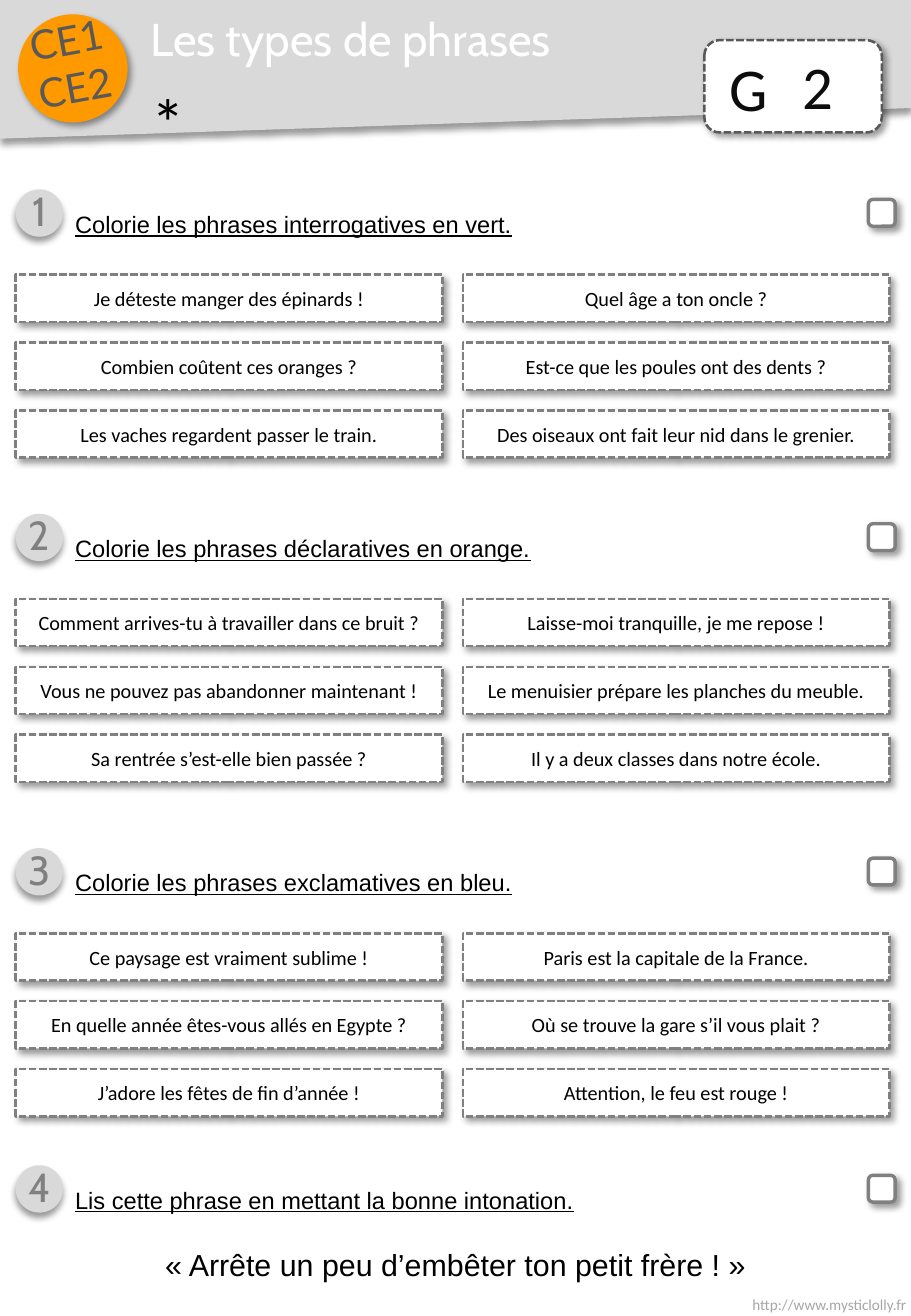
from lxml import etree
from pptx import Presentation
from pptx import util as u
from pptx.dml.color import RGBColor
from pptx.enum import dml, shapes, text
from pptx.oxml.ns import qn

Kind = shapes.MSO_SHAPE
LEFT, CENTER, RIGHT = text.PP_ALIGN.LEFT, text.PP_ALIGN.CENTER, text.PP_ALIGN.RIGHT

# Worksheet content: top in cm, instruction, rows of sentences
EXERCISES = [
    (3.96, "Colorie les phrases interrogatives en vert.", [
        ("Je déteste manger des épinards !", "Quel âge a ton oncle ?"),
        ("Combien coûtent ces oranges ?", "Est-ce que les poules ont des dents ?"),
        ("Les vaches regardent passer le train.",
         "Des oiseaux ont fait leur nid dans le grenier.")]),
    (10.74, "Colorie les phrases déclaratives en orange.", [
        ("Comment arrives-tu à travailler dans ce bruit ?",
         "Laisse-moi tranquille, je me repose !"),
        ("Vous ne pouvez pas abandonner maintenant !",
         "Le menuisier prépare les planches du meuble."),
        ("Sa rentrée s’est-elle bien passée ?", "Il y a deux classes dans notre école.")]),
    (17.73, "Colorie les phrases exclamatives en bleu.", [
        ("Ce paysage est vraiment sublime !", "Paris est la capitale de la France."),
        ("En quelle année êtes-vous allés en Egypte ?",
         "Où se trouve la gare s’il vous plait ?"),
        ("J’adore les fêtes de fin d’année !", "Attention, le feu est rouge !")]),
    (24.36, "Lis cette phrase en mettant la bonne intonation.", []),
]
MARGIN = 0.33
CARD_WIDTH, CARD_HEIGHT = 8.92, 0.99
COLUMN_STEP, ROW_STEP = 9.35, 1.42
CARDS_OFFSET = 1.78


def color(hex_code):
    return RGBColor.from_string(hex_code)


def add_shadow(shape, angle):
    shape.shadow.inherit = False
    effects = shape._element.spPr.find(qn("a:effectLst"))
    outer = etree.SubElement(effects, qn("a:outerShdw"), blurRad=str(u.Pt(4)),
                             dist=str(u.Pt(3)), dir=str(angle * 60000),
                             algn="tl", rotWithShape="0")
    black = etree.SubElement(outer, qn("a:srgbClr"), val="000000")
    etree.SubElement(black, qn("a:alpha"), val="40000")


def paint(shape, fill, line=None, weight=1.5, dashed=False, angle=45):
    shape.fill.solid()
    shape.fill.fore_color.rgb = color(fill)
    if line:
        shape.line.color.rgb = color(line)
        shape.line.width = u.Pt(weight)
        if dashed:
            shape.line.dash_style = dml.MSO_LINE.SQUARE_DOT
    else:
        shape.line.fill.background()
    add_shadow(shape, angle)


def add_block(parent, kind, left, top, width, height, fill, **style):
    block = parent.add_shape(kind, u.Cm(left), u.Cm(top), u.Cm(width), u.Cm(height))
    paint(block, fill, **style)
    return block


def write(frame, words, size, font, ink, align=LEFT, underline=None, spacing=None):
    frame.word_wrap = True
    frame.text = words
    for paragraph in frame.paragraphs:
        paragraph.alignment = align
        paragraph.line_spacing = spacing
        paragraph.font.size = u.Pt(size)
        paragraph.font.name = font
        paragraph.font.color.rgb = color(ink)
        paragraph.font.underline = underline


def add_label(parent, left, top, width, height, words, size, font, ink, **style):
    label = parent.add_textbox(u.Cm(left), u.Cm(top), u.Cm(width), u.Cm(height))
    write(label.text_frame, words, size, font, ink, **style)
    return label


def add_header(page):
    # Slanted banner
    outline = page.build_freeform(0, 0)
    outline.add_line_segments([(u.Cm(19.05), 0), (u.Cm(19.05), u.Cm(2.26)),
                               (0, u.Cm(2.9))], close=True)
    paint(outline.convert_to_shape(), "D9D9D9", angle=90)
    # Sheet code
    add_block(page, Kind.ROUNDED_RECTANGLE, 14.73, 0.84, 3.71, 1.93, "FFFFFF",
              line="595959", dashed=True)
    add_label(page, 15.01, 0.94, 1.5, 1.8, "G", 36, "Calibri", "0D0D0D")
    add_label(page, 16.54, 0.89, 2.31, 1.93, "2", 36, "Calibri", "0D0D0D")
    # Class levels
    add_block(page, Kind.OVAL, 0.38, 0.3, 2.29, 2.26, "FF9900")
    levels = add_label(page, 0.33, 0.18, 2.29, 2.31, "CE1\nCE2", 24, "Lato", "595959",
                       align=CENTER)
    levels.rotation = 349.6
    # Title and difficulty
    add_label(page, 2.9, 0.1, 9.45, 1.7, "Les types de phrases", 27.2, "Cabin", "FFFFFF")
    add_label(page, 2.92, 1.55, 3.2, 0.97, "*", 40, "Calibri", "000000")


def add_exercise(page, number, top, instruction, rows):
    # Number badge
    badge = page.add_group_shape().shapes
    add_block(badge, Kind.OVAL, MARGIN, top, 0.99, 0.99, "D9D9D9", angle=90)
    add_label(badge, MARGIN, top - 0.2, 0.99, 1.27, str(number), 24, "Cabin", "808080",
              align=CENTER)
    # Instruction and tick box
    add_label(page, 1.32, top, 17.2, 1.07, instruction, 14, "Arial", "000000",
              underline=True, spacing=1.5)
    add_block(page, Kind.ROUNDED_RECTANGLE, 18.16, top + 0.21, 0.56, 0.56, "FFFFFF",
              line="808080", weight=2)
    # Sentence cards
    for row, sentences in enumerate(rows):
        for column, sentence in enumerate(sentences):
            card = add_block(page, Kind.RECTANGLE, MARGIN + column * COLUMN_STEP,
                             top + CARDS_OFFSET + row * ROW_STEP, CARD_WIDTH, CARD_HEIGHT,
                             "FFFFFF", line="808080", dashed=True)
            card.text_frame.vertical_anchor = text.MSO_ANCHOR.MIDDLE
            write(card.text_frame, sentence, 12, "Calibri", "000000", align=CENTER)


def main():
    deck = Presentation()
    deck.slide_width, deck.slide_height = u.Cm(19.05), u.Cm(27.51)
    page = deck.slides.add_slide(deck.slide_layouts[6]).shapes

    add_label(page, 14.81, 26.95, 4.39, 0.64, "http://www.mysticlolly.fr", 9, "Calibri",
              "A6A6A6", align=RIGHT)
    add_header(page)
    for number, (top, instruction, rows) in enumerate(EXERCISES, start=1):
        add_exercise(page, number, top, instruction, rows)
    # Sentence to read aloud
    add_label(page, MARGIN, 25.93, 18.39, 1.02, "« Arrête un peu d’embêter ton petit frère ! »",
              18, "Arial", "000000", align=CENTER)
    deck.save("out.pptx")


if __name__ == "__main__":
    main()
